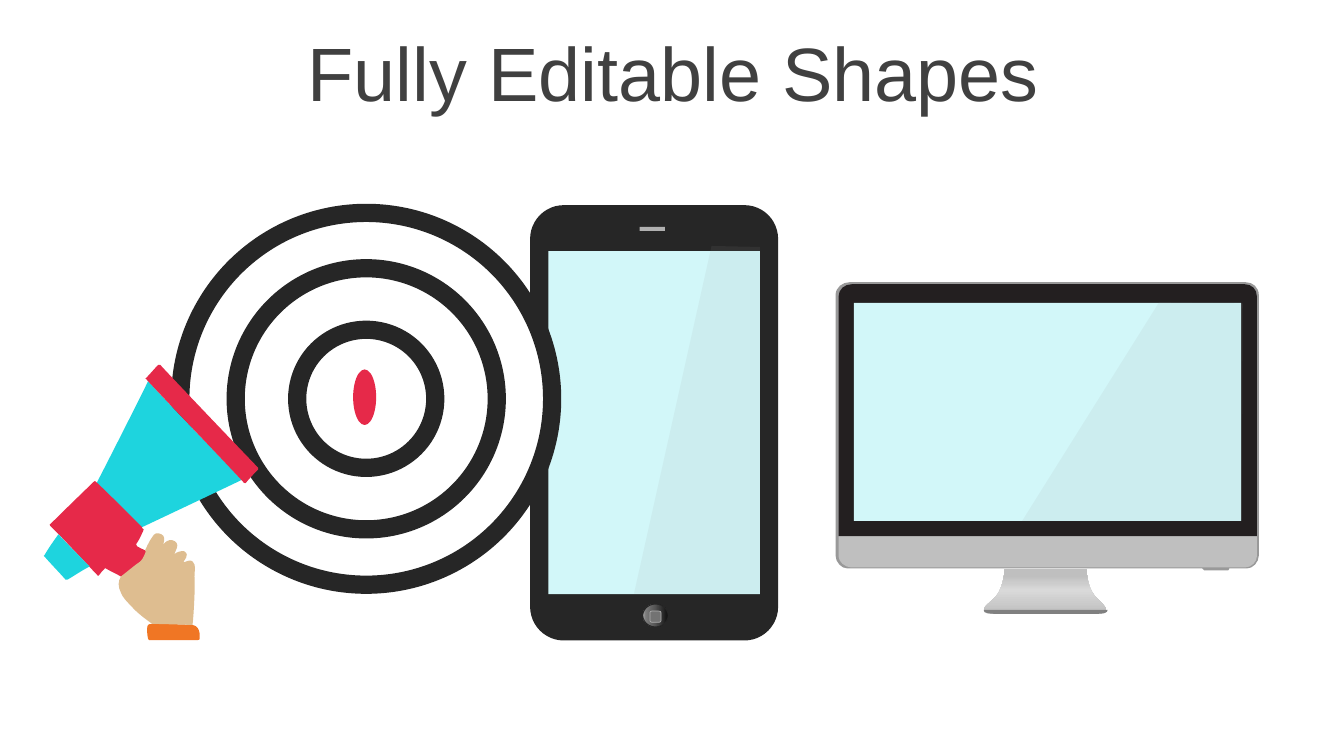
from lxml import etree
from pptx import Presentation
from pptx.dml.color import RGBColor
from pptx.enum.shapes import MSO_SHAPE
from pptx.enum.text import MSO_ANCHOR, PP_ALIGN
from pptx.oxml.ns import qn
from pptx.util import Cm, Pt

RECTANGLE = MSO_SHAPE.RECTANGLE
ROUNDED = MSO_SHAPE.ROUNDED_RECTANGLE
OVAL = MSO_SHAPE.OVAL
CENTER = PP_ALIGN.CENTER
MIDDLE = MSO_ANCHOR.MIDDLE

GRID = Cm(2.54) // 100

FONT = "Arial"
BLACK, BEZEL, WHITE = "262626", "231F20", "FFFFFF"
EDGE, SILVER, SHADE, DETAIL = "999999", "BFBFBF", "808080", "B0B0B0"
GLASS, RED, CYAN, SKIN, ORANGE = "D2F7F9", "E62949", "1ED4DE", "DEBD90", "F07624"
STAND_STOPS = [(0, SILVER), (53, "D9D9D9"), (83, SILVER), (100, SILVER)]
BUTTON_STOPS = [(0, "0F0F0F"), (56, "595959"), (91, SHADE), (100, SILVER)]

# Outlines are in hundredths of an inch: a pair is a corner, six numbers are a Bézier curve.
STAND = [(1087, 592), (1078, 583, 1078, 564, 1078, 564), (997, 564),
         (997, 564, 996, 583, 988, 592), (983, 597, 975, 602, 976, 606),
         (976, 608, 979, 609, 989, 609), (1085, 609),
         (1095, 609, 1098, 608, 1098, 606), (1098, 602, 1092, 597, 1087, 592)]
CASE = [(1236, 280), (843, 280), (836, 280, 829, 285, 829, 293), (829, 551),
        (829, 558, 835, 564, 841, 564), (1237, 564),
        (1243, 564, 1249, 558, 1249, 551), (1249, 293),
        (1249, 285, 1243, 280, 1236, 280)]
SLOT = [(1193, 563), (1193, 563, 1192, 565, 1195, 566), (1218, 566),
        (1218, 566, 1220, 566, 1220, 563)]
FRAME = [(1235, 282), (845, 282), (838, 282, 832, 287, 832, 294), (832, 532),
         (1247, 532), (1247, 294), (1247, 287, 1242, 282, 1235, 282)]
FOOT = [(976, 605), (976, 608, 980, 609, 990, 609), (1086, 609),
        (1096, 609, 1099, 608, 1099, 605)]
CHIN = [(832, 552), (832, 557, 838, 563, 845, 563), (1235, 563),
        (1242, 563, 1247, 557, 1247, 552), (1247, 532), (832, 532)]
MONITOR_GLARE = [(1150, 300), (1233, 301), (1232, 517), (1014, 517)]
PHONE_GLARE = [(706, 244), (754, 245), (754, 589), (629, 589)]
HORN = [(96, 479), (103, 466, 147, 379, 147, 378), (160, 393, 228, 463, 240, 476),
        (230, 481, 141, 523, 141, 523), (140, 524, 95, 480, 96, 479)]
GRIP = [(141, 523), (141, 523, 141, 523, 141, 524), (143, 525, 143, 525, 142, 527),
        (140, 531, 138, 536, 135, 540), (135, 541, 135, 541, 136, 542),
        (138, 543, 141, 545, 144, 546), (145, 547, 146, 547, 145, 549),
        (144, 551, 143, 552, 142, 554), (142, 555, 141, 556, 140, 557),
        (134, 562, 121, 572, 120, 572), (115, 569, 110, 567, 105, 564),
        (104, 563, 104, 564, 104, 564), (102, 566, 100, 568, 98, 571),
        (98, 571, 97, 571, 97, 571), (94, 568, 53, 524, 50, 522),
        (49, 521, 49, 520, 50, 520), (63, 507, 92, 479, 93, 478),
        (94, 477, 95, 477, 95, 478), (96, 478, 141, 523, 141, 523)]
RIM = [(145, 376), (144, 376, 144, 375, 145, 375), (149, 371, 153, 366, 157, 362),
       (158, 361, 158, 362, 159, 362), (168, 372, 233, 440, 256, 464),
       (257, 465, 257, 465, 256, 466), (252, 470, 248, 474, 244, 479),
       (244, 479, 243, 480, 242, 479), (242, 478, 145, 377, 145, 376)]
MOUTHPIECE = [(58, 530), (68, 541, 80, 553, 89, 562), (81, 566, 74, 571, 67, 575),
              (66, 576, 66, 576, 65, 575), (58, 567, 51, 560, 44, 552),
              (43, 552, 43, 551, 44, 551), (48, 544, 53, 537, 58, 530)]
CUFF = [(151, 619), (151, 619, 178, 619, 191, 620), (196, 621, 197, 624, 198, 628),
        (198, 630, 198, 632, 198, 634), (198, 635, 197, 635, 196, 635),
        (188, 635, 156, 635, 148, 635), (147, 635, 147, 635, 147, 634),
        (146, 630, 146, 627, 146, 624), (146, 620, 147, 619, 151, 619)]
HAND = [(120, 572), (124, 569, 136, 559, 138, 558), (141, 556, 143, 552, 144, 549),
        (145, 548, 145, 547, 144, 546), (145, 544, 148, 537, 151, 533),
        (153, 529, 156, 528, 160, 530), (163, 531, 164, 535, 162, 540),
        (165, 537, 167, 536, 168, 536), (172, 535, 176, 538, 176, 541),
        (176, 544, 173, 549, 173, 550), (174, 548, 181, 546, 183, 547),
        (189, 551, 182, 556, 182, 558), (185, 557, 189, 555, 191, 557),
        (195, 561, 193, 565, 193, 572), (194, 579, 192, 615, 191, 620),
        (191, 620, 157, 619, 151, 619), (143, 613, 136, 608, 130, 601),
        (126, 597, 122, 593, 120, 588), (117, 582, 117, 577, 120, 572)]


def color(value):
    return RGBColor.from_string(value)


class Illustration:
    """Draws filled shapes, outlines and text on one slide."""

    def __init__(self, page):
        self.page = page
        self.shapes = page.shapes

    def start_group(self):
        self.shapes = self.page.shapes.add_group_shape().shapes

    def text(self, text, left, top, width, height, size, ink):
        box = self.page.shapes.add_textbox(Cm(left), Cm(top), Cm(width), Cm(height))
        box.text_frame.word_wrap = True
        box.text_frame.vertical_anchor = MIDDLE
        para = box.text_frame.paragraphs[0]
        para.alignment = CENTER
        para.line_spacing = 0.9
        span = para.add_run()
        span.text = text
        span.font.name = FONT
        span.font.size = Pt(size)
        span.font.color.rgb = color(ink)

    def shape(self, kind, left, top, width, height, fill, line=None, weight=0, corner=None):
        shape = self.shapes.add_shape(kind, Cm(left), Cm(top), Cm(width), Cm(height))
        if corner is not None:
            shape.adjustments[0] = corner
        self.paint(shape, fill, line, weight)
        return shape

    def outline(self, outline, fill, opacity=None):
        corners = [step[-2:] for step in outline]
        builder = self.shapes.build_freeform(*corners[0], scale=GRID)
        builder.add_line_segments(corners[1:], close=True)
        shape = builder.convert_to_shape()
        self.bend(shape, outline, min(x for x, y in corners), min(y for x, y in corners))
        self.paint(shape, fill)
        if opacity is not None:
            tint = shape.fill._xPr.find(".//" + qn("a:srgbClr"))
            etree.SubElement(tint, qn("a:alpha"), val=str(opacity * 1000))
        return shape

    def bend(self, shape, outline, left, top):
        segments = list(shape._element.iter(qn("a:lnTo")))
        for segment, step in zip(segments, outline[1:]):
            if len(step) == 6:
                curve = etree.Element(qn("a:cubicBezTo"))
                for x, y in zip(step[::2], step[1::2]):
                    etree.SubElement(curve, qn("a:pt"), x=str(x - left), y=str(y - top))
                segment.getparent().replace(segment, curve)

    def paint(self, shape, fill, line=None, weight=0):
        shape.shadow.inherit = False
        shape.fill.solid()
        shape.fill.fore_color.rgb = color(fill)
        if line is None:
            shape.line.fill.background()
        else:
            shape.line.color.rgb = color(line)
            shape.line.width = Pt(weight)

    def gradient(self, shape, stops, angle):
        shape.fill.gradient()
        gradient = shape.fill._xPr.find(qn("a:gradFill"))
        stop_list = gradient.find(qn("a:gsLst"))
        for old_stop in list(stop_list):
            stop_list.remove(old_stop)
        for position, value in stops:
            stop = etree.SubElement(stop_list, qn("a:gs"), pos=str(position * 1000))
            etree.SubElement(stop, qn("a:srgbClr"), val=value)
        gradient.find(qn("a:lin")).set("ang", str(angle * 60000))


def main():
    deck = Presentation()
    deck.slide_width, deck.slide_height = Cm(33.87), Cm(19.05)
    art = Illustration(deck.slides.add_slide(deck.slide_layouts[6]))
    art.text("Fully Editable Shapes", 0.89, 0.93, 32.16, 2.01, size=54, ink="404040")

    art.start_group()
    art.gradient(art.outline(STAND, SILVER), STAND_STOPS, 270)
    for outline, fill in ((CASE, EDGE), (SLOT, EDGE), (FRAME, BEZEL),
                          (FOOT, SHADE), (CHIN, SILVER)):
        art.outline(outline, fill)
    art.shape(RECTANGLE, 21.52, 7.63, 9.76, 5.5, GLASS)
    art.outline(MONITOR_GLARE, EDGE, opacity=10)

    art.start_group()
    art.shape(ROUNDED, 13.36, 5.17, 6.25, 10.97, BLACK, corner=0.136)
    art.shape(RECTANGLE, 16.12, 5.72, 0.64, 0.1, DETAIL)
    button = art.shape(OVAL, 16.2, 15.22, 0.64, 0.58, SHADE, line=BLACK)
    art.gradient(button, BUTTON_STOPS, 180)
    art.shape(ROUNDED, 16.38, 15.4, 0.28, 0.28, "737373", line=DETAIL, weight=0.5)
    art.shape(RECTANGLE, 13.82, 6.33, 5.33, 8.64, GLASS)
    art.outline(PHONE_GLARE, EDGE, opacity=10)

    art.start_group()
    for size in (9.37, 6.58, 3.48):
        art.shape(OVAL, 9.23 - size / 2, 10.05 - size / 2, size, size,
                  WHITE, line=BLACK, weight=13)
    art.shape(OVAL, 8.9, 9.31, 0.58, 1.4, RED)

    art.start_group()
    for outline, fill in ((HORN, CYAN), (GRIP, RED), (RIM, RED),
                          (MOUTHPIECE, CYAN), (CUFF, ORANGE), (HAND, SKIN)):
        art.outline(outline, fill)

    deck.save("out.pptx")


if __name__ == "__main__":
    main()
